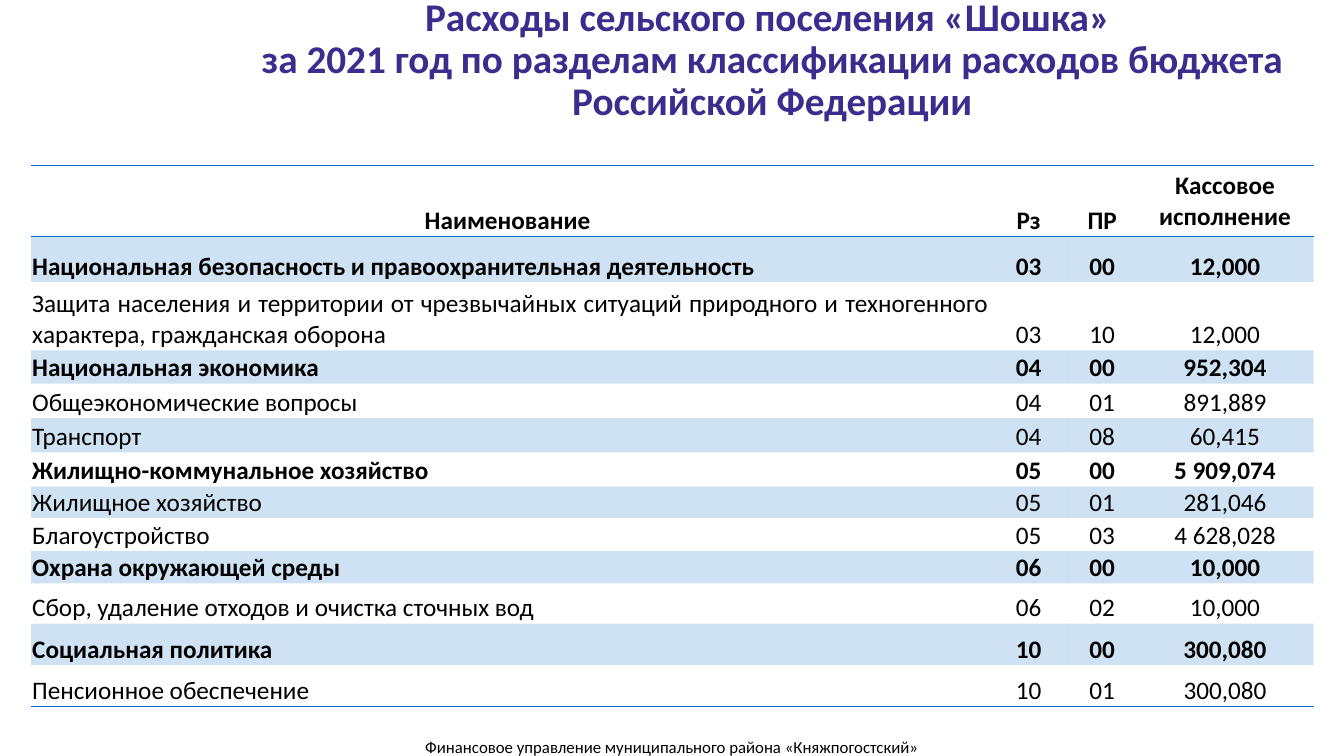
from lxml import etree
from pptx import Presentation
from pptx.dml.color import RGBColor
from pptx.enum.text import MSO_ANCHOR, PP_ALIGN
from pptx.oxml.ns import qn
from pptx.util import Pt

CENTER, JUSTIFY = PP_ALIGN.CENTER, PP_ALIGN.JUSTIFY
MIDDLE, BOTTOM, TOP = MSO_ANCHOR.MIDDLE, MSO_ANCHOR.BOTTOM, MSO_ANCHOR.TOP
BLUE, BLACK, VIOLET = "0F6FC6", "000000", "3C2C8E"

HEADER = ("Наименование ", "Рз", "ПР", "Кассовое исполнение")
EXPENSES = [
    ("Национальная безопасность и правоохранительная деятельность", "03", "00", "12,000"),
    ("Защита населения и территории от чрезвычайных ситуаций природного "
     "и техногенного характера, гражданская оборона", "03", "10", "12,000"),
    ("Национальная экономика", "04", "00", "952,304"),
    ("Общеэкономические вопросы", "04", "01", "891,889"),
    ("Транспорт", "04", "08", "60,415"),
    ("Жилищно-коммунальное хозяйство", "05", "00", "5 909,074"),
    ("Жилищное хозяйство", "05", "01", "281,046"),
    ("Благоустройство", "05", "03", "4 628,028"),
    ("Охрана окружающей среды", "06", "00", "10,000"),
    ("Сбор, удаление отходов и очистка сточных вод", "06", "02", "10,000"),
    ("Социальная политика", "10", "00", "300,080"),
    ("Пенсионное обеспечение", "10", "01", "300,080"),
]
COLUMN_WIDTHS = (684.5, 56, 49, 126.5)
ROW_HEIGHTS = (50, 32.4, 49, 23.8, 24.5, 24.5, 24.5, 20.2, 23.8, 23, 28.8, 29.5, 29.5)


def write(frame, lines, size, color, bold=False, align=CENTER):
    """Fill the first paragraph of a text frame, with a line break between lines."""
    paragraph = frame.paragraphs[0]
    paragraph.alignment = align
    for index, line in enumerate(lines):
        if index:
            paragraph.add_line_break()
        run = paragraph.add_run()
        run.text = line
        run.font.name = "Calibri"
        run.font.size = Pt(size)
        run.font.bold = bold
        run.font.color.rgb = RGBColor.from_string(color)
    return paragraph


def set_borders(cell, ruled_sides):
    """Rule the given sides (of L, R, T, B) in blue and clear the others."""
    properties = cell._tc.get_or_add_tcPr()
    for index, side in enumerate("LRTB"):
        line = etree.Element(qn(f"a:ln{side}"), w=str(Pt(1)))
        if side in ruled_sides:
            fill = etree.SubElement(line, qn("a:solidFill"))
            etree.SubElement(fill, qn("a:srgbClr"), val=BLUE)
        else:
            etree.SubElement(line, qn("a:noFill"))
        properties.insert(index, line)


presentation = Presentation()
presentation.slide_width = Pt(960)
presentation.slide_height = Pt(540)
slide = presentation.slides.add_slide(presentation.slide_layouts[6])

title = slide.shapes.add_textbox(Pt(154), Pt(1.5), Pt(795), Pt(84)).text_frame
title.word_wrap = True
title.vertical_anchor = MIDDLE
title_lines = ("Расходы сельского поселения «Шошка» ",
               "за 2021 год по разделам классификации расходов бюджета Российской Федерации")
write(title, title_lines, 28, VIOLET, bold=True).line_spacing = 0.9

rows = [HEADER] + EXPENSES
table = slide.shapes.add_table(len(rows), len(HEADER), Pt(22.3), Pt(118.5),
                               Pt(sum(COLUMN_WIDTHS)), Pt(sum(ROW_HEIGHTS))).table
table.first_row = False
table.horz_banding = False
for column, width in zip(table.columns, COLUMN_WIDTHS):
    column.width = Pt(width)

for r, values in enumerate(rows):
    table.rows[r].height = Pt(ROW_HEIGHTS[r])
    is_header = r == 0
    is_section = values[2] == "00"
    for c, value in enumerate(values):
        cell = table.cell(r, c)
        if is_header and c == 3:
            cell.vertical_anchor = TOP
        else:
            cell.vertical_anchor = BOTTOM
            cell.margin_left = cell.margin_right = cell.margin_top = Pt(0.7)
            cell.margin_bottom = Pt(0)
        align = JUSTIFY if c == 0 and not is_header else CENTER
        write(cell.text_frame, [value], 18, BLACK, is_header or is_section, align)
        if r % 2:
            cell.fill.solid()
            cell.fill.fore_color.rgb = RGBColor.from_string(BLUE)
            tint = cell._tc.tcPr.find(f".//{qn('a:srgbClr')}")
            etree.SubElement(tint, qn("a:alpha"), val="20000")
        else:
            cell.fill.background()
        ruled_sides = "TB" if is_header else "T" if r == 1 else "B" if r == len(rows) - 1 else ""
        set_borders(cell, ruled_sides)

footer = slide.shapes.add_textbox(Pt(178.5), Pt(519), Pt(603), Pt(29)).text_frame
footer.word_wrap = True
footer.vertical_anchor = MIDDLE
write(footer, ["Финансовое управление муниципального района «Княжпогостский»"], 12, BLACK)

presentation.save("out.pptx")
